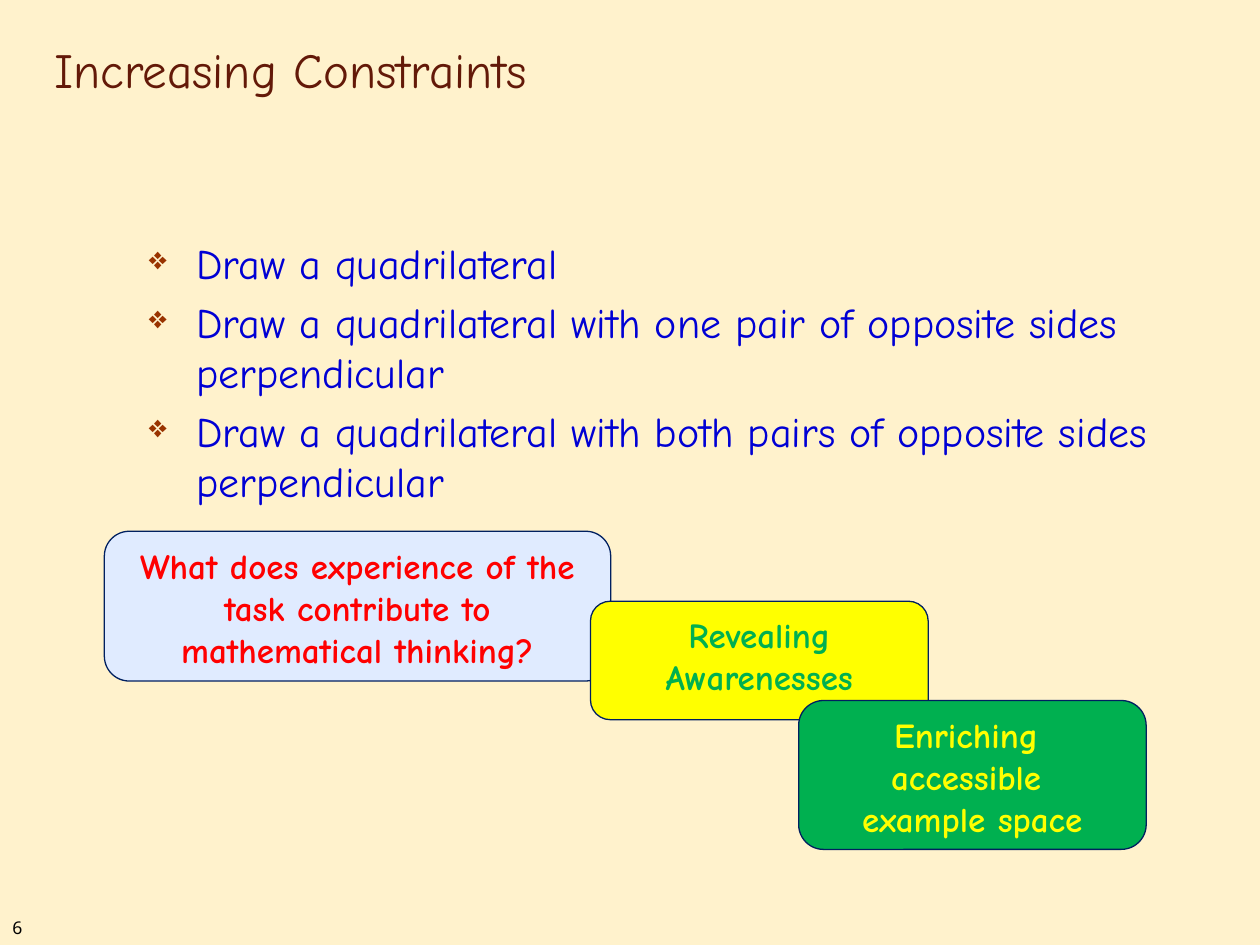
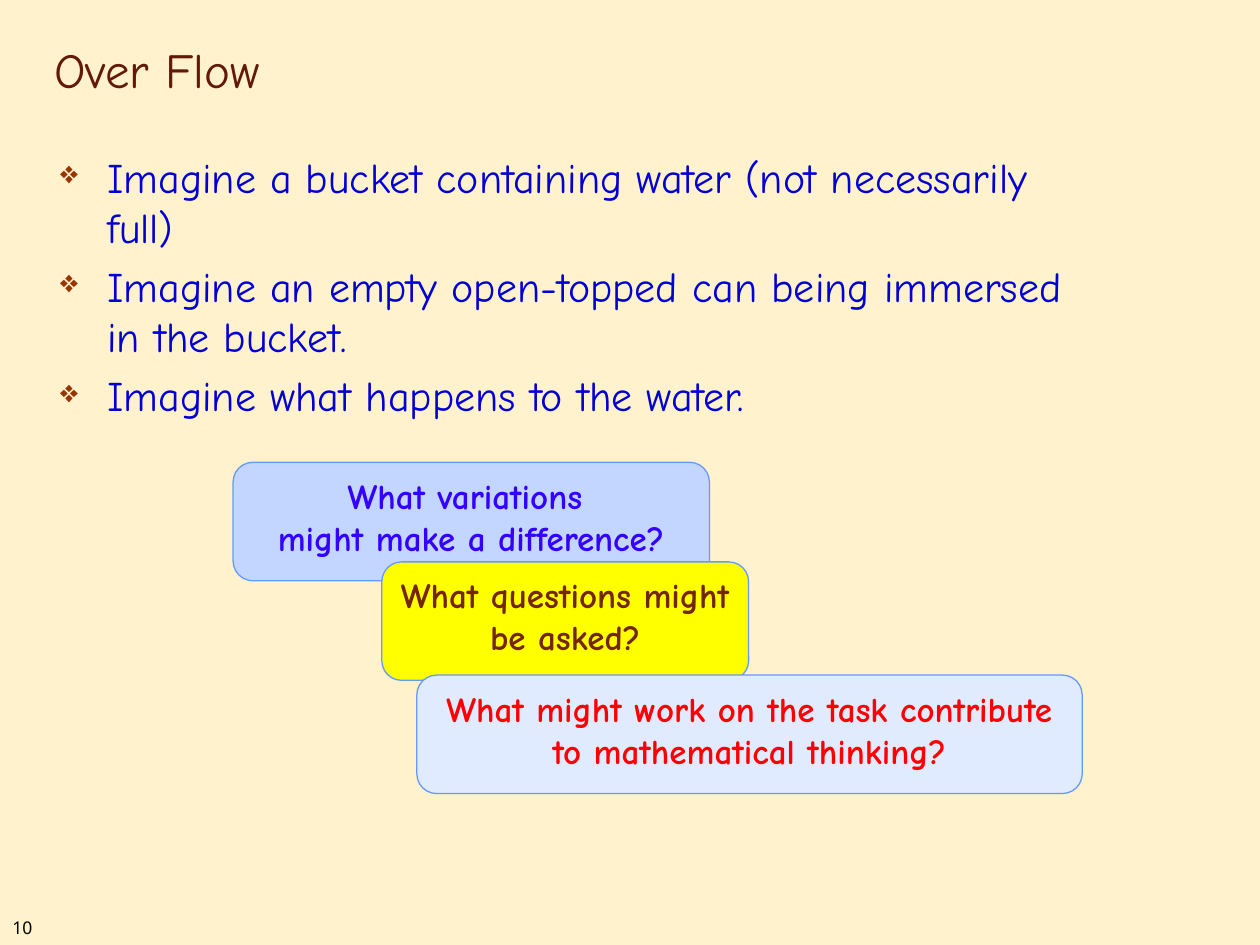
from lxml.etree import SubElement
from pptx import Presentation
from pptx.dml.color import RGBColor
from pptx.enum.shapes import MSO_SHAPE
from pptx.enum.text import MSO_ANCHOR, PP_ALIGN
from pptx.oxml.ns import qn
from pptx.util import Pt

FONT = "Comic Neue"
BACKGROUND = "FFF2CC"
TITLE_COLOR = "631908"
BODY_COLOR = "0000D4"
BULLET_COLOR = "993300"
NAVY, SKY = "002060", "6699FF"
PALE_BLUE, MID_BLUE, YELLOW, GREEN = "E0EBFF", "C2D6FF", "FFFF00", "00B050"
RED, VIOLET, BROWN = "FF0000", "3400FF", "732600"
BODY_SIZE = (608.4, 172.1)
TWO_LINES = 67.7


def color(hex_string):
    """Turn a hex string into a colour."""
    return RGBColor.from_string(hex_string)


def write(paragraph, text, size=20, font=FONT, ink="000000", bold=False,
          align=PP_ALIGN.LEFT, space_before=0):
    """Put formatted text in a paragraph; a vertical tab breaks the line."""
    paragraph.text = text
    paragraph.alignment = align
    paragraph.space_before = Pt(space_before)
    for run in paragraph.runs:
        run.font.size = Pt(size)
        run.font.name = font
        run.font.bold = bold
        run.font.color.rgb = color(ink)


def add_bullet(paragraph):
    """Give a paragraph a hanging diamond bullet."""
    properties = paragraph._p.get_or_add_pPr()
    properties.set("marL", str(Pt(27)))
    properties.set("indent", str(-Pt(27)))
    bullet_color = SubElement(properties, qn("a:buClr"))
    SubElement(bullet_color, qn("a:srgbClr")).set("val", BULLET_COLOR)
    SubElement(properties, qn("a:buSzPct")).set("val", "75000")
    SubElement(properties, qn("a:buChar")).set("char", "❖")


def add_text_frame(slide, left, top, width, height, anchor=MSO_ANCHOR.TOP):
    """Add a wrapping text box and return its text frame."""
    box = slide.shapes.add_textbox(Pt(left), Pt(top), Pt(width), Pt(height))
    box.text_frame.word_wrap = True
    box.text_frame.vertical_anchor = anchor
    return box.text_frame


def add_base_slide(presentation, title, number):
    """Add a slide with the shared background, title and page number."""
    slide = presentation.slides.add_slide(presentation.slide_layouts[6])
    slide.background.fill.solid()
    slide.background.fill.fore_color.rgb = color(BACKGROUND)
    footer = add_text_frame(slide, 0, 520.6, 31, 19.4)
    write(footer.paragraphs[0], str(number), size=10, font="Noto Sans")
    heading = add_text_frame(slide, 24, 12, 612, 48, MSO_ANCHOR.BOTTOM)
    write(heading.paragraphs[0], title, size=28, ink=TITLE_COLOR)
    return slide


def add_bullets(slide, left, top, items):
    """Add the bulleted list of instructions."""
    frame = add_text_frame(slide, left, top, *BODY_SIZE)
    for index, item in enumerate(items):
        paragraph = frame.add_paragraph() if index else frame.paragraphs[0]
        write(paragraph, item, size=24, ink=BODY_COLOR, space_before=4.8)
        add_bullet(paragraph)


def add_callout(slide, text, bounds, fill, ink, outline):
    """Add a rounded box with bold centred text."""
    left, top, width, height = map(Pt, bounds)
    shape = slide.shapes.add_shape(
        MSO_SHAPE.ROUNDED_RECTANGLE, left, top, width, height)
    shape.shadow.inherit = False
    shape.fill.solid()
    shape.fill.fore_color.rgb = color(fill)
    shape.line.color.rgb = color(outline)
    shape.line.width = Pt(0.75)
    frame = shape.text_frame
    frame.word_wrap = True
    frame.vertical_anchor = MSO_ANCHOR.TOP
    write(frame.paragraphs[0], text, ink=ink, bold=True, align=PP_ALIGN.CENTER)


def add_constraints_slide(presentation):
    """Build the quadrilateral task."""
    slide = add_base_slide(presentation, "Increasing Constraints", 6)
    add_bullets(slide, 78, 132, [
        "Draw a quadrilateral",
        "Draw a quadrilateral with one pair of opposite sides perpendicular",
        "Draw a quadrilateral with both pairs of opposite sides perpendicular",
    ])
    callouts = [
        ("What does experience of the task contribute to mathematical thinking?",
         (59.6, 303.6, 289.4, 85.6), PALE_BLUE, RED),
        ("Revealing\vAwarenesses",
         (337.4, 343.6, 193, TWO_LINES), YELLOW, GREEN),
        ("Enriching \vaccessible \vexample space",
         (456.4, 400.3, 198.6, 85.1), GREEN, YELLOW),
    ]
    for callout in callouts:
        add_callout(slide, *callout, outline=NAVY)


def add_overflow_slide(presentation):
    """Build the bucket task."""
    slide = add_base_slide(presentation, "Over Flow", 10)
    add_bullets(slide, 27.2, 82.8, [
        "Imagine a bucket containing water (not necessarily full)",
        "Imagine an empty open-topped can being immersed in the bucket.",
        "Imagine what happens to the water.",
    ])
    callouts = [
        ("What variations \vmight make a difference?",
         (133.2, 264.2, 272.2, TWO_LINES), MID_BLUE, VIOLET),
        ("What questions might be asked?",
         (218.2, 321.1, 209.6, TWO_LINES), YELLOW, BROWN),
        ("What might work on the task contribute to mathematical thinking?",
         (238.2, 385.8, 380.2, TWO_LINES), PALE_BLUE, RED),
    ]
    for callout in callouts:
        add_callout(slide, *callout, outline=SKY)


def main():
    """Build and save the presentation."""
    presentation = Presentation()
    presentation.slide_width = Pt(720)
    presentation.slide_height = Pt(540)
    add_constraints_slide(presentation)
    add_overflow_slide(presentation)
    presentation.save("out.pptx")


if __name__ == "__main__":
    main()
